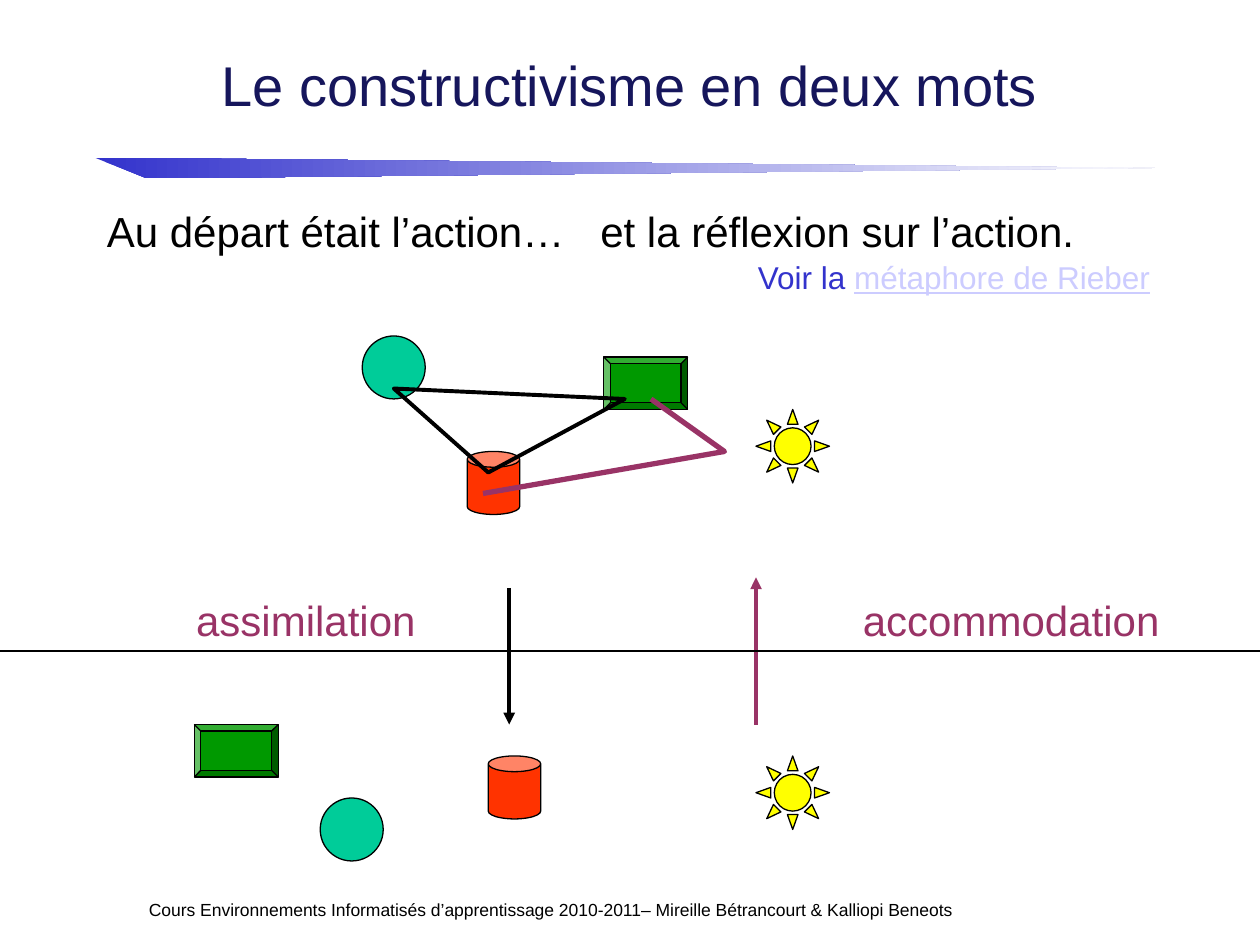
from lxml import etree
from pptx import Presentation
from pptx import util as u
from pptx.dml.color import RGBColor
from pptx.enum import shapes, text
from pptx.oxml import ns

BLACK = RGBColor(0x00, 0x00, 0x00)
WHITE = RGBColor(0xFF, 0xFF, 0xFF)
NAVY = RGBColor(0x16, 0x16, 0x5C)
BLUE = RGBColor(0x33, 0x33, 0xCC)
LAVENDER = RGBColor(0xCC, 0xCC, 0xFF)
PLUM = RGBColor(0x99, 0x33, 0x66)
TEAL = RGBColor(0x00, 0xCC, 0x99)
RED = RGBColor(0xFF, 0x33, 0x00)
GREEN = RGBColor(0x00, 0x99, 0x00)
YELLOW = RGBColor(0xFF, 0xFF, 0x00)

deck = Presentation()
deck.slide_width, deck.slide_height = u.Pt(720), u.Pt(540)
page = deck.slides.add_slide(deck.slide_layouts[6])


def add_text(words, *, left, top, width, height=36, size=24, color=BLACK,
             wrap=False, align=text.PP_ALIGN.LEFT, anchor=text.MSO_ANCHOR.TOP):
    box = page.shapes.add_textbox(u.Pt(left), u.Pt(top), u.Pt(width), u.Pt(height))
    box.text_frame.word_wrap = wrap
    box.text_frame.vertical_anchor = anchor
    para = box.text_frame.paragraphs[0]
    para.alignment = align
    para.font.size = u.Pt(size)
    para.font.name = "Arial"
    span = para.add_run()
    span.text = words
    span.font.size = u.Pt(size)
    span.font.name = "Arial"
    span.font.color.rgb = color
    return para


def add_outline(points, closed):
    corners = [(u.Pt(x), u.Pt(y)) for x, y in points]
    builder = page.shapes.build_freeform(*corners[0], scale=1.0)
    builder.add_line_segments(corners[1:], close=closed)
    outline = builder.convert_to_shape()
    outline.shadow.inherit = False
    return outline


wedge = add_outline([(54, 90), (84, 102), (660, 96)], True)
wedge.line.fill.background()
wedge.fill.gradient()
wedge.fill.gradient_angle = 0
for stop, color in zip(wedge.fill.gradient_stops, (BLUE, WHITE)):
    stop.color.rgb = color
wedge.fill.gradient_stops[0].position = 0
wedge.fill.gradient_stops[1].position = 1

add_text("Le constructivisme en deux mots", left=54, top=6, width=612, height=84,
         size=32, color=NAVY, wrap=True, align=text.PP_ALIGN.CENTER,
         anchor=text.MSO_ANCHOR.MIDDLE)
add_text("Au départ était l’action…", left=54, top=114, width=276)
add_text("et la réflexion sur l’action.", left=336, top=114, width=285)

KIND = shapes.MSO_SHAPE
objects = [
    (KIND.OVAL, 36, 36, None, TEAL, [(183, 456), (207, 192)]),
    (KIND.CAN, 30, 36, 0.3, RED, [(279, 432), (267, 258)]),
    (KIND.BEVEL, 48, 30, 0.125, GREEN, [(111, 414), (345, 204)]),
    (KIND.SUN, 42, 42, 0.25, YELLOW, [(432, 432), (432, 234)]),
]
for kind, width, height, adjustment, color, places in objects:
    for left, top in places:
        item = page.shapes.add_shape(kind, u.Pt(left), u.Pt(top), u.Pt(width), u.Pt(height))
        item.shadow.inherit = False
        if adjustment is not None:
            item.adjustments[0] = adjustment
        item.fill.solid()
        item.fill.fore_color.rgb = color
        item.line.color.rgb = BLACK
        item.line.width = u.Pt(0.75)

links = [
    ([(225, 222), (279, 270), (357, 228)], True, BLACK, 2.25),
    ([(372, 228), (414, 258), (276, 282)], False, PLUM, 3),
]
for points, closed, color, weight in links:
    link = add_outline(points, closed)
    link.fill.background()
    link.line.color.rgb = color
    link.line.width = u.Pt(weight)

lines = [
    ((291, 336), (291, 414), BLACK, 2.25, True),
    ((432, 414), (432, 330), PLUM, 2.25, True),
    ((0, 372), (720, 372), BLACK, 0.75, False),
]
for start, end, color, weight, arrow in lines:
    line = page.shapes.add_connector(shapes.MSO_CONNECTOR.STRAIGHT,
                                     *map(u.Pt, start + end))
    line.line.color.rgb = color
    line.line.width = u.Pt(weight)
    if arrow:
        etree.SubElement(line.line._get_or_add_ln(), ns.qn("a:tailEnd"), type="triangle")
    etree.SubElement(line._element.spPr, ns.qn("a:effectLst"))

add_text("assimilation", left=105, top=336, width=140, color=PLUM)
add_text("accommodation", left=486, top=336, width=184, color=PLUM)

para = add_text("Voir la ", left=426, top=144, width=274, height=29, size=18,
                color=BLUE, wrap=True)
span = para.add_run()
span.text = "métaphore de Rieber"
span.font.size = u.Pt(18)
span.font.name = "Arial"
span.font.color.rgb = LAVENDER
span.font.underline = True

add_text("Cours Environnements Informatisés d’apprentissage 2010-2011– "
         "Mireille Bétrancourt & Kalliopi Beneots",
         left=78, top=510, width=612, size=10, wrap=True)

deck.save("out.pptx")
